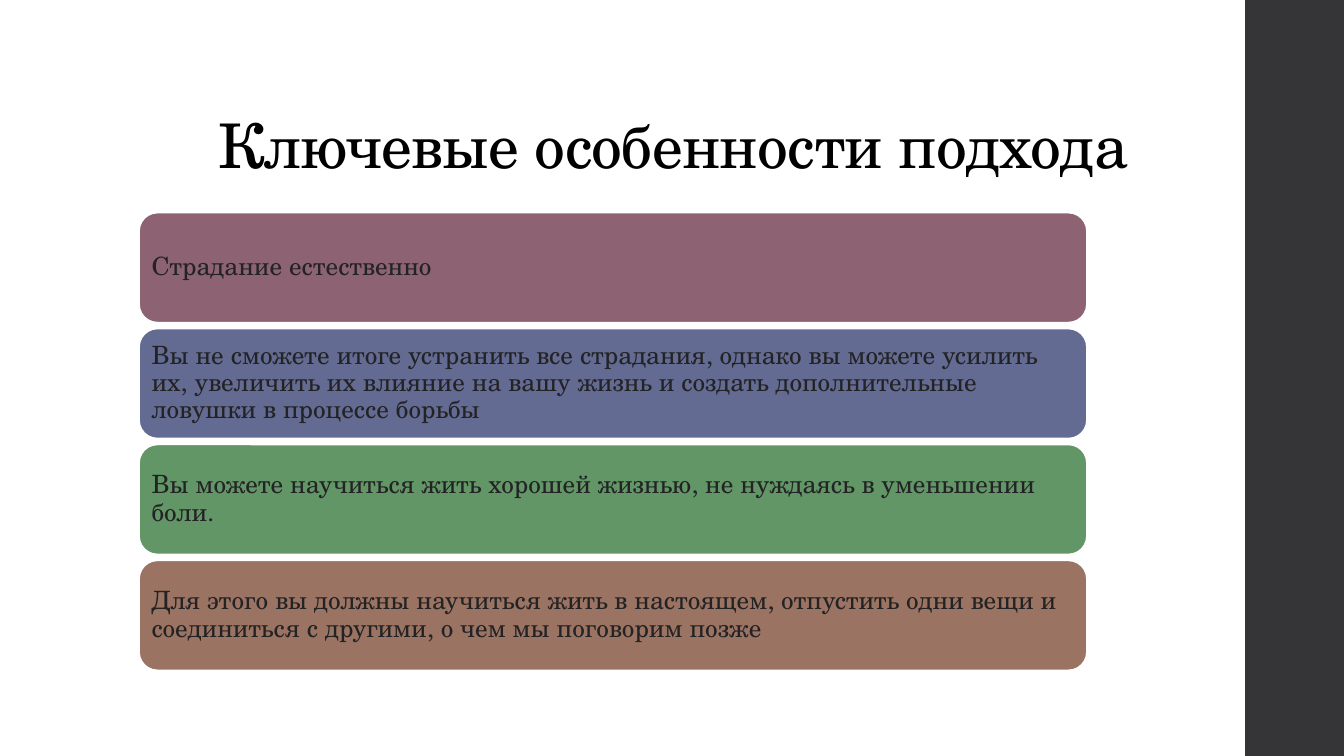
from pptx import Presentation
from pptx.dml.color import RGBColor
from pptx.enum.shapes import MSO_SHAPE
from pptx.enum.text import MSO_ANCHOR, PP_ALIGN
from pptx.util import Inches, Pt

RECTANGLE = MSO_SHAPE.RECTANGLE
ROUNDED = MSO_SHAPE.ROUNDED_RECTANGLE
BOTTOM, MIDDLE = MSO_ANCHOR.BOTTOM, MSO_ANCHOR.MIDDLE
LEFT, CENTER = PP_ALIGN.LEFT, PP_ALIGN.CENTER

COLORS = {
    "white": "FFFFFF",
    "title": "000000",
    "body": "232325",
    "side": "353537",
    "plum": "8D6374",
    "blue": "636B92",
    "green": "629666",
    "brown": "9B7362",
}

FEATURES = [
    ("plum", "Страдание естественно"),
    ("blue", "Вы не сможете итоге устранить все страдания, однако вы можете "
             "усилить их, увеличить их влияние на вашу жизнь и создать "
             "дополнительные ловушки в процессе борьбы"),
    ("green", "Вы можете научиться жить хорошей жизнью, не нуждаясь в "
              "уменьшении боли."),
    ("brown", "Для этого вы должны научиться жить в настоящем, отпустить одни "
              "вещи и соединиться с другими, о чем мы поговорим позже"),
]
CONTENT_LEFT = 1.38
FEATURES_TOP, FEATURE_PITCH = 2.11, 1.15


class SlideBuilder:
    """Holds the slide and its text style."""

    font_name = "TeX Gyre Schola"
    line_spacing = 0.9

    def __init__(self, slide):
        self.slide = slide

    def color(self, name):
        return RGBColor.from_string(COLORS[name])

    def set_text(self, frame, text, size, color, align, anchor):
        frame.word_wrap = True
        frame.vertical_anchor = anchor
        paragraph = frame.paragraphs[0]
        paragraph.text = text
        paragraph.alignment = align
        paragraph.line_spacing = self.line_spacing
        paragraph.font.name = self.font_name
        paragraph.font.size = Pt(size)
        paragraph.font.color.rgb = self.color(color)
        return paragraph

    def block(self, kind, left, top, width, height, fill):
        block = self.slide.shapes.add_shape(
            kind, Inches(left), Inches(top), Inches(width), Inches(height))
        block.shadow.inherit = False
        block.fill.solid()
        block.fill.fore_color.rgb = self.color(fill)
        block.line.fill.background()
        return block

    def title(self, text):
        box = self.slide.shapes.add_textbox(
            Inches(CONTENT_LEFT), Inches(0.4), Inches(10.6), Inches(1.45))
        heading = self.set_text(
            box.text_frame, text, 44, "title", CENTER, BOTTOM)
        # Letter spacing in hundredths of a point
        heading.runs[0]._r.get_or_add_rPr().set("spc", "-50")

    def feature(self, top, fill, text):
        card = self.block(ROUNDED, CONTENT_LEFT, top, 9.4, 1.09, fill)
        card.line.color.rgb = self.color("white")
        card.line.width = Pt(1.1)
        frame = card.text_frame
        frame.margin_left = frame.margin_right = Inches(0.07)
        frame.margin_top = frame.margin_bottom = Inches(0.07)
        self.set_text(frame, text, 18, "body", LEFT, MIDDLE)


def main():
    presentation = Presentation()
    presentation.slide_width = Inches(13.33)
    presentation.slide_height = Inches(7.5)
    builder = SlideBuilder(
        presentation.slides.add_slide(presentation.slide_layouts[6]))

    # Side band and title
    builder.block(RECTANGLE, 12.35, 0, 0.98, 7.5, "side")
    builder.title("Ключевые особенности подхода")

    # Stack of key features
    for row, (fill, text) in enumerate(FEATURES):
        builder.feature(FEATURES_TOP + row * FEATURE_PITCH, fill, text)

    presentation.save("out.pptx")


if __name__ == "__main__":
    main()
